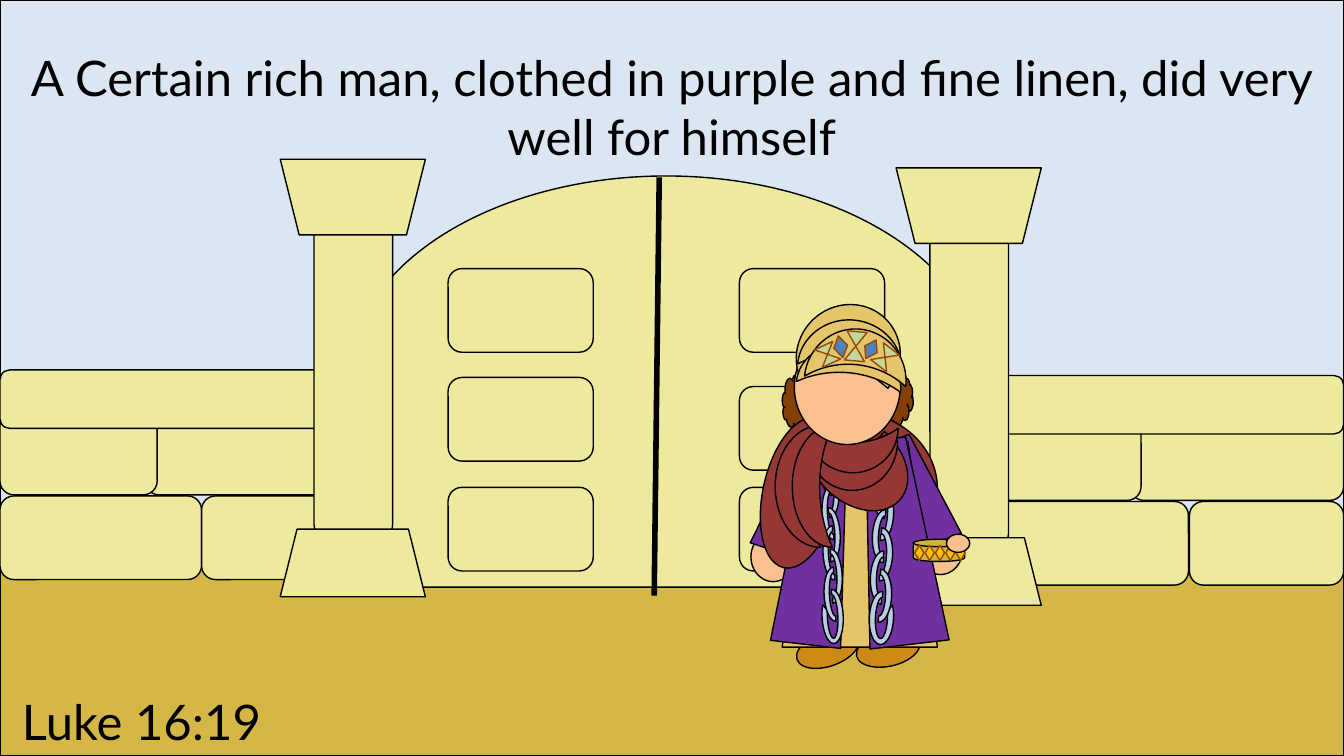
from pptx import Presentation
from pptx.dml.color import RGBColor
from pptx.enum.shapes import MSO_CONNECTOR, MSO_SHAPE
from pptx.enum.text import MSO_AUTO_SIZE, PP_ALIGN
from pptx.oxml.ns import qn
from pptx.util import Inches, Pt
from lxml.etree import SubElement

# The slide is a grid of 1333 columns by 750 rows
CELL = Inches(0.01)
COLUMNS, ROWS = 1333, 750
HORIZON = 542

BLACK = RGBColor(0x00, 0x00, 0x00)
SKY = RGBColor(0xDC, 0xE6, 0xF2)
SAND = RGBColor(0xD5, 0xB7, 0x47)
STONE = RGBColor(0xED, 0xE9, 0x9D)
HAIR = RGBColor(0x84, 0x3F, 0x06)
SHOE = RGBColor(0xCC, 0x8B, 0x16)
SKIN = RGBColor(0xFA, 0xC0, 0x90)
SCARF = RGBColor(0x95, 0x37, 0x35)
PURPLE = RGBColor(0x70, 0x30, 0xA0)
LINEN = RGBColor(0xE5, 0xC5, 0x69)
SILVER = RGBColor(0xB9, 0xCD, 0xE5)
GREEN_GEM = RGBColor(0xC3, 0xD6, 0x9B)
BLUE_GEM = RGBColor(0x4F, 0x81, 0xBD)
BRONZE = RGBColor(0x98, 0x48, 0x07)
BOWL = RGBColor(0xCF, 0xB3, 0x3D)
GOLD = RGBColor(0xFF, 0xC0, 0x00)


def draw(group, kind, box, fill, rotation=0, adjustments=(), line=BLACK, mirrored=False):
    """Add an outlined shape; box is left, top, width, height in grid cells."""
    shape = group.shapes.add_shape(kind, *(round(length * CELL) for length in box))
    shape.shadow.inherit = False
    shape.fill.solid()
    shape.fill.fore_color.rgb = fill
    shape.line.color.rgb = line
    shape.line.width = Pt(1)
    shape.rotation = rotation
    for index, value in enumerate(adjustments):
        shape.adjustments[index] = value
    if mirrored:
        shape._element.spPr.find(qn("a:xfrm")).set("flipH", "1")


presentation = Presentation()
presentation.slide_width = Inches(13.333)
presentation.slide_height = ROWS * CELL
slide = presentation.slides.add_slide(presentation.slide_layouts[6])

# Sky, ground and gate
scene = slide.shapes.add_group_shape()
draw(scene, MSO_SHAPE.RECTANGLE, (0, 0, COLUMNS, HORIZON), SKY)
draw(scene, MSO_SHAPE.RECTANGLE, (0, HORIZON, COLUMNS, ROWS - HORIZON), SAND)
draw(scene, MSO_SHAPE.FLOWCHART_DELAY, (457, 62, 408, 633), STONE, 270)

# Walls: each brick is left, width, course
COURSES = {"bottom": (492, 83), "middle": (408, 83), "top": (367, 58)}
WALLS = [
    (0, [(0, 200, "bottom"), (200, 144, "bottom"), (144, 200, "middle"),
         (0, 156, "middle"), (0, 344, "top")]),
    (5.5, [(967, 212, "bottom"), (1180, 153, "bottom"), (1121, 212, "middle"),
           (967, 165, "middle"), (967, 366, "top")]),
]
for drop, bricks in WALLS:
    for left, width, course in bricks:
        top, height = COURSES[course]
        draw(scene, MSO_SHAPE.ROUNDED_RECTANGLE, (left, top + drop, width, height), STONE)

# Pillars: shaft, capital, base
for left, top in [(278, 158), (889, 166.5)]:
    draw(scene, MSO_SHAPE.ROUNDED_RECTANGLE, (left - 86, top + 178, 317, 78), STONE, 90)
    draw(scene, MSO_SHAPE.TRAPEZOID, (left, top, 144, 75), STONE, 180)
    draw(scene, MSO_SHAPE.TRAPEZOID, (left, top + 367, 144, 67), STONE)

# Door panels
for left, tops in [(475, (236, 344, 453)), (764, (236, 353, 453))]:
    for top in tops:
        draw(scene, MSO_SHAPE.ROUNDED_RECTANGLE, (left, top, 83, 144), STONE, 90)

door_gap = scene.shapes.add_connector(
    MSO_CONNECTOR.STRAIGHT, 654 * CELL, 176 * CELL, 649 * CELL, 591 * CELL)
door_gap.line.color.rgb = BLACK
door_gap.line.width = Pt(4)
SubElement(door_gap._element.spPr, qn("a:effectLst"))

# Captions
CAPTIONS = [
    ("A Certain rich man, clothed in purple and fine linen, did very well for himself",
     (0, 42, COLUMNS, 128), PP_ALIGN.CENTER),
    ("Luke 16:19", (12, 681, 556, 69), PP_ALIGN.LEFT),
]
for text, box, alignment in CAPTIONS:
    text_frame = scene.shapes.add_textbox(*(length * CELL for length in box)).text_frame
    text_frame.word_wrap = True
    text_frame.auto_size = MSO_AUTO_SIZE.SHAPE_TO_FIT_TEXT
    text_frame.text = text
    paragraph = text_frame.paragraphs[0]
    paragraph.alignment = alignment
    font = paragraph.runs[0].font
    font.name = "Lato"
    font.size = Pt(35)
    font.color.rgb = BLACK

# Rich man: hair, shoes, hands, sleeves and tunic
man = slide.shapes.add_group_shape()
BODY = [
    (MSO_SHAPE.CLOUD, (776, 370, 31, 57), HAIR, 0),
    (MSO_SHAPE.CLOUD, (875, 375, 31, 48), HAIR, 0),
    (MSO_SHAPE.OVAL, (864, 612, 34, 64), SHOE, 77.7),
    (MSO_SHAPE.OVAL, (804, 612, 34, 64), SHOE, 71.2),
    (MSO_SHAPE.OVAL, (745, 528, 44, 49), SKIN, 0),
    (MSO_SHAPE.OVAL, (911, 521, 44, 49), SKIN, 0),
    (MSO_SHAPE.OVAL, (763, 409, 167, 152), SCARF, 0),
    (MSO_SHAPE.TRAPEZOID, (875, 433, 62, 110), PURPLE, 340.2),
    (MSO_SHAPE.TRAPEZOID, (760, 441, 62, 110), PURPLE, 18.3),
    (MSO_SHAPE.TRAPEZOID, (776, 438, 154, 204), LINEN, 0, (0.19,)),
]
for part in BODY:
    draw(man, *part)

# Robe halves, each with a chain of alternating links mirrored about the tunic
LINKS = [(850, 454), (852, 476), (848, 498), (851, 520),
         (847, 538), (849, 561), (848, 601), (846, 579)]
OPEN_ENDS = {454: (24.17, 0, 0.25), 601: (22.95, 0, 0.25)}
CHAIN_MIRROR = 1647
ROBE_HALVES = [
    (False, (851, 435, 79, 205), 353.4, 53, 24),
    (True, (776, 434, 70, 206), 6.6, 54, 21),
]
for mirrored, robe, robe_rotation, link_width, link_height in ROBE_HALVES:
    draw(man, MSO_SHAPE.TRAPEZOID, robe, PURPLE, robe_rotation)
    for left, top in LINKS:
        rotation = 92.6 if left in (850, 848, 847, 846) and top != 601 else 272.6
        if mirrored:
            left, rotation = CHAIN_MIRROR - left, 360 - rotation
        draw(man, MSO_SHAPE.BLOCK_ARC, (left, top, link_width, link_height), SILVER,
             rotation % 360, OPEN_ENDS.get(top, ()), mirrored=mirrored)

# Neck, scarf, head and turban
FOLD = (0.68,)
HEAD = [
    (MSO_SHAPE.TRAPEZOID, (823, 437, 49, 14), SKIN, 180),
    (MSO_SHAPE.PIE, (810, 402, 81, 113), SCARF, 311.6),
    (MSO_SHAPE.MOON, (821, 417, 49, 90), SCARF, 270, FOLD),
    (MSO_SHAPE.MOON, (824, 402, 44, 90), SCARF, 270, FOLD),
    (MSO_SHAPE.PIE, (757, 413, 74, 152), SCARF, 12.5, (30.58, 162)),
    (MSO_SHAPE.MOON, (769, 422, 45, 121), SCARF, 0, FOLD),
    (MSO_SHAPE.MOON, (786, 422, 40, 121), SCARF, 0, FOLD),
    (MSO_SHAPE.OVAL, (788, 327, 105, 114), SKIN, 0),
    (MSO_SHAPE.PIE, (789, 303, 105, 101), LINEN, 137.5, (11.73, 156.8)),
    (MSO_SHAPE.MOON, (821, 290, 49, 104), LINEN, 95.9, FOLD),
    (MSO_SHAPE.MOON, (822, 310, 44, 104), LINEN, 95.9, FOLD),
    (MSO_SHAPE.MOON, (825, 302, 52, 101), LINEN, 95.9, FOLD),
]
for part in HEAD:
    draw(man, *part)

TURBAN_GEMS = [
    (MSO_SHAPE.FLOWCHART_COLLATE, (811, 342, 20, 19), GREEN_GEM, 335.3),
    (MSO_SHAPE.FLOWCHART_COLLATE, (868, 344, 20, 21), GREEN_GEM, 37.5),
    (MSO_SHAPE.FLOWCHART_COLLATE, (839, 329, 20, 29), GREEN_GEM, 5.1),
    (MSO_SHAPE.DIAMOND, (827, 333, 14, 22), BLUE_GEM, 348.1),
    (MSO_SHAPE.DIAMOND, (857, 336, 14, 21), BLUE_GEM, 29.2),
]
for gem in TURBAN_GEMS:
    draw(man, *gem, line=BRONZE)

# Bowl with a row of diamonds, held by the thumb
draw(man, MSO_SHAPE.FLOWCHART_MAGNETIC_DISK, (906, 535, 51, 22), BOWL)
for column in range(5):
    draw(man, MSO_SHAPE.DIAMOND, (907.5 + 10.25 * column, 541, 9, 15), GOLD, line=BRONZE)
draw(man, MSO_SHAPE.OVAL, (939, 530, 23, 18), SKIN)

presentation.save("out.pptx")
